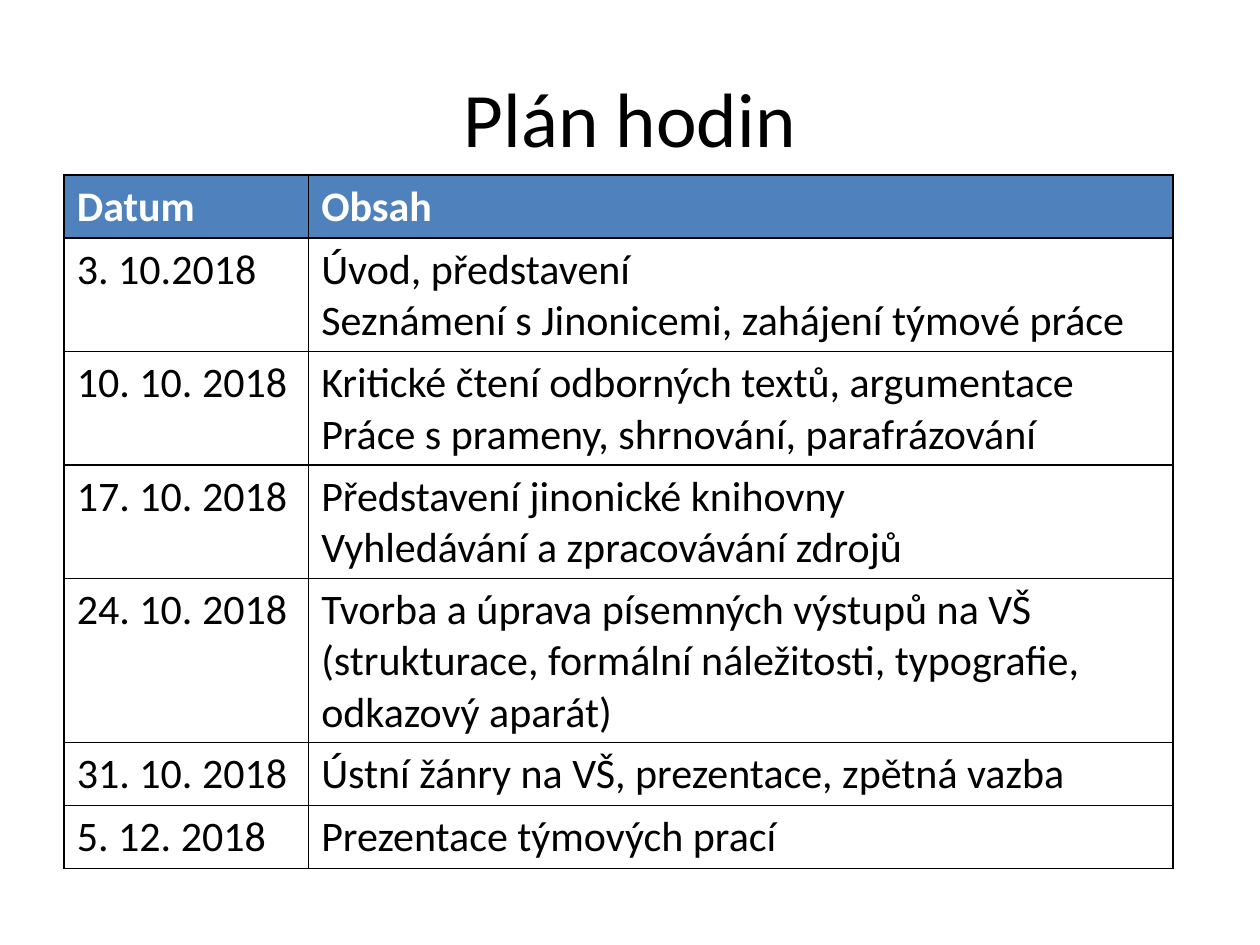
from lxml.etree import SubElement
from pptx import Presentation
from pptx.dml.color import RGBColor
from pptx.enum.text import MSO_ANCHOR, PP_ALIGN
from pptx.oxml.ns import qn
from pptx.util import Inches, Pt

# Content: date, lines of the lesson, number of lines the row takes
TITLE = "Plán hodin"
ROWS = [
    ("Datum", ["Obsah"], 1),
    ("3. 10.2018", ["Úvod, představení",
                    "Seznámení s Jinonicemi, zahájení týmové práce"], 2),
    ("10. 10. 2018", ["Kritické čtení odborných textů, argumentace",
                      "Práce s prameny, shrnování, parafrázování"], 2),
    ("17. 10. 2018", ["Představení jinonické knihovny",
                      "Vyhledávání a zpracovávání zdrojů"], 2),
    ("24. 10. 2018", ["Tvorba a úprava písemných výstupů na VŠ (strukturace, "
                      "formální náležitosti, typografie, odkazový aparát)"], 3),
    ("31. 10. 2018", ["Ústní žánry na VŠ, prezentace, zpětná vazba"], 1),
    ("5. 12. 2018", ["Prezentace týmových prací"], 1),
]
COL_WIDTHS = [1.94, 6.86]
LINE_HEIGHT, CELL_PADDING = 0.4, 0.1

THEME = {
    "font": "Calibri", "title_size": 44, "table_size": 24,
    "text": "000000", "header_text": "FFFFFF", "header_fill": "4F81BD",
    "border": "000000", "border_width": 1,
}


def style(p, size, color, bold=False):
    p.font.name = THEME["font"]
    p.font.size = Pt(size)
    p.font.bold = bold
    p.font.color.rgb = RGBColor.from_string(color)


def add_borders(cell):
    tc_pr = cell._tc.get_or_add_tcPr()
    for i, side in enumerate(("lnL", "lnR", "lnT", "lnB")):
        ln = SubElement(tc_pr, qn(f"a:{side}"), w=str(Pt(THEME["border_width"])))
        fill = SubElement(ln, qn("a:solidFill"))
        SubElement(fill, qn("a:srgbClr"), val=THEME["border"])
        tc_pr.insert(i, ln)  # borders come before the cell fill


def fill_cell(cell, lines, header):
    if header:
        cell.fill.solid()
        cell.fill.fore_color.rgb = RGBColor.from_string(THEME["header_fill"])
    else:
        cell.fill.background()
    add_borders(cell)
    tf = cell.text_frame
    tf.text = "\n".join(lines)
    for p in tf.paragraphs:
        style(p, THEME["table_size"],
              THEME["header_text" if header else "text"], header)


prs = Presentation()
prs.slide_width, prs.slide_height = Inches(10), Inches(7.5)
s = prs.slides.add_slide(prs.slide_layouts[6])

# Title
tf = s.shapes.add_textbox(Inches(0.5), Inches(0.3), Inches(9), Inches(1.25)).text_frame
tf.word_wrap = True
tf.vertical_anchor = MSO_ANCHOR.MIDDLE
p = tf.paragraphs[0]
p.text = TITLE
p.alignment = PP_ALIGN.CENTER
style(p, THEME["title_size"], THEME["text"])

# Lesson plan table
heights = [CELL_PADDING + LINE_HEIGHT * n for _, _, n in ROWS]
table = s.shapes.add_table(len(ROWS), len(COL_WIDTHS), Inches(0.51), Inches(1.39),
                           Inches(sum(COL_WIDTHS)), Inches(sum(heights))).table
table.horz_banding = False
for col, width in zip(table.columns, COL_WIDTHS):
    col.width = Inches(width)
for i, (date, lines, _) in enumerate(ROWS):
    table.rows[i].height = Inches(heights[i])
    fill_cell(table.cell(i, 0), [date], i == 0)
    fill_cell(table.cell(i, 1), lines, i == 0)

prs.save("out.pptx")
